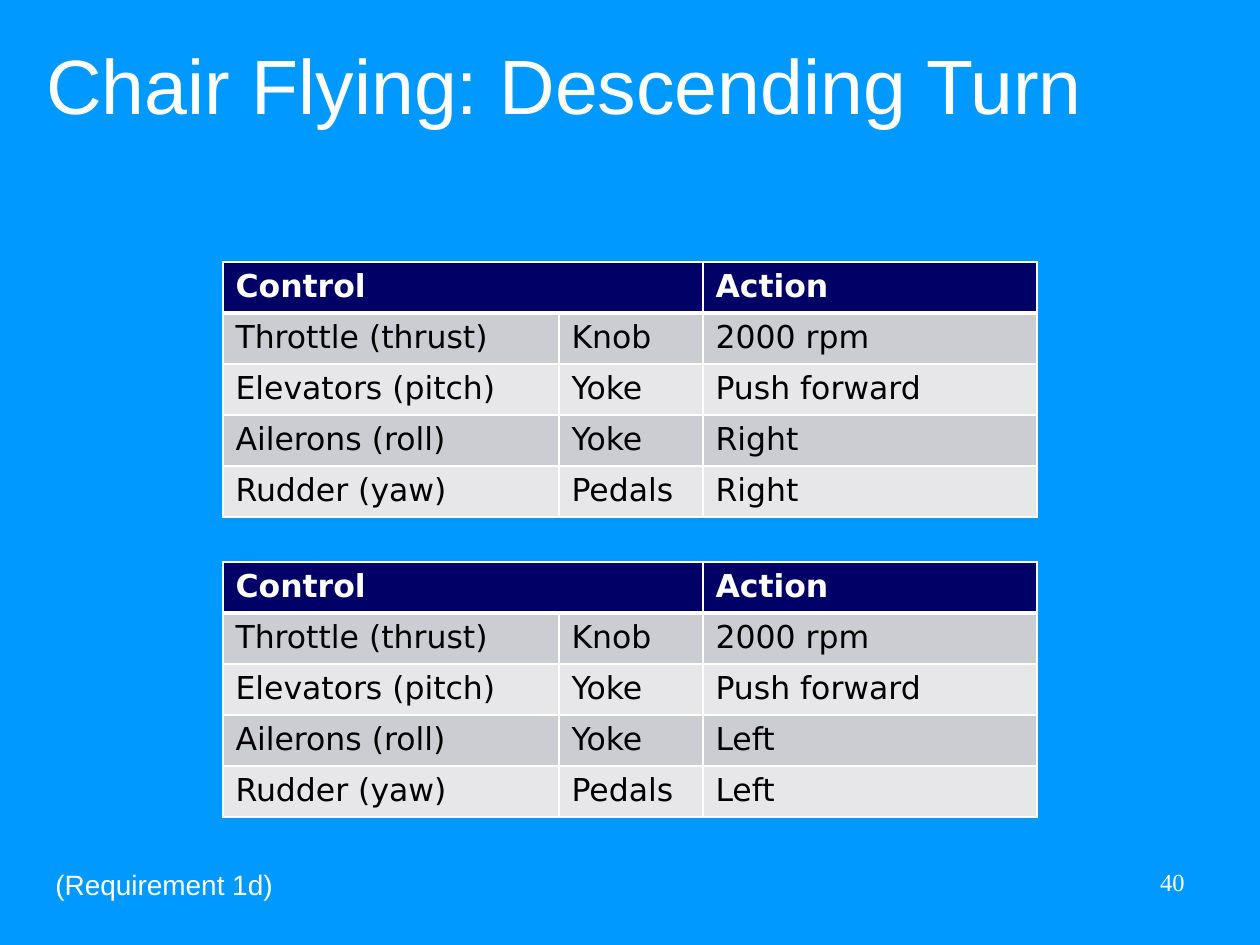
from lxml import etree
from pptx import Presentation
from pptx.dml.color import RGBColor
from pptx.enum.text import MSO_ANCHOR, PP_ALIGN
from pptx.oxml.ns import qn
from pptx.util import Pt

SCALE = 914400 / 126
LEFT, RIGHT = PP_ALIGN.LEFT, PP_ALIGN.RIGHT
TOP, MIDDLE, BOTTOM = MSO_ANCHOR.TOP, MSO_ANCHOR.MIDDLE, MSO_ANCHOR.BOTTOM

SKY, NAVY, WHITE, BLACK = "0099FF", "000066", "FFFFFF", "000000"
BANDS = ("CCCCD3", "E7E7EA")
COLS = (336, 144, 334)
ROW = 51


def px(n):
    return round(n * SCALE)


def rgb(code):
    return RGBColor.from_string(code)


def put_text(frame, text, size=18, font="Arial", color=WHITE, bold=False,
             align=LEFT):
    para = frame.paragraphs[0]
    para.alignment = align
    run = para.add_run()
    run.text = text
    run.font.size = Pt(size)
    run.font.name = font
    run.font.bold = bold
    run.font.color.rgb = rgb(color)


def add_text(slide, box, text, anchor=TOP, wrap=True, **style):
    frame = slide.shapes.add_textbox(*map(px, box)).text_frame
    frame.word_wrap = wrap
    frame.vertical_anchor = anchor
    put_text(frame, text, **style)


def set_edges(cell, **widths):
    """Draw white cell borders, 1 pt wide unless a side says otherwise."""
    props = cell._tc.get_or_add_tcPr()
    for i, side in enumerate("LRTB"):
        line = etree.Element(qn(f"a:ln{side}"), w=str(Pt(widths.get(side, 1))))
        fill = etree.SubElement(line, qn("a:solidFill"))
        etree.SubElement(fill, qn("a:srgbClr"), val=WHITE)
        props.insert(i, line)


def add_grid(slide, top, turn):
    """Add the table of controls for a turn to one side."""
    rows = (
        ("Control", "", "Action"),
        ("Throttle (thrust)", "Knob", "2000 rpm"),
        ("Elevators (pitch)", "Yoke", "Push forward"),
        ("Ailerons (roll)", "Yoke", turn),
        ("Rudder (yaw)", "Pedals", turn),
    )
    box = (223, top, sum(COLS), ROW * len(rows))
    table = slide.shapes.add_table(len(rows), len(COLS), *map(px, box)).table
    for col, width in zip(table.columns, COLS):
        col.width = px(width)
    for r, row in enumerate(rows):
        table.rows[r].height = px(ROW)
        head = r == 0
        edges = {0: {"B": 3}, 1: {"T": 3}}.get(r, {})
        for c, text in enumerate(row):
            cell = table.cell(r, c)
            cell.fill.solid()
            cell.fill.fore_color.rgb = rgb(NAVY if head else BANDS[(r - 1) % 2])
            set_edges(cell, **edges)
            if text:
                put_text(cell.text_frame, text, font="DejaVu Sans", bold=head,
                         color=WHITE if head else BLACK)
    table.cell(0, 0).merge(table.cell(0, 1))


def main():
    deck = Presentation()
    deck.slide_width, deck.slide_height = px(1260), px(945)
    slide = deck.slides.add_slide(deck.slide_layouts[6])
    slide.background.fill.solid()
    slide.background.fill.fore_color.rgb = rgb(SKY)

    add_text(slide, (34, 16, 1191, 120), "Chair Flying: Descending Turn",
             anchor=BOTTOM, size=44)
    add_text(slide, (903, 861, 294, 66), "40", size=14,
             font="Times New Roman", align=RIGHT)
    add_text(slide, (43, 861, 246, 47), "(Requirement 1d)", anchor=MIDDLE,
             wrap=False, size=16)
    for top, turn in ((262, "Right"), (562, "Left")):
        add_grid(slide, top, turn)

    deck.save("out.pptx")


if __name__ == "__main__":
    main()
